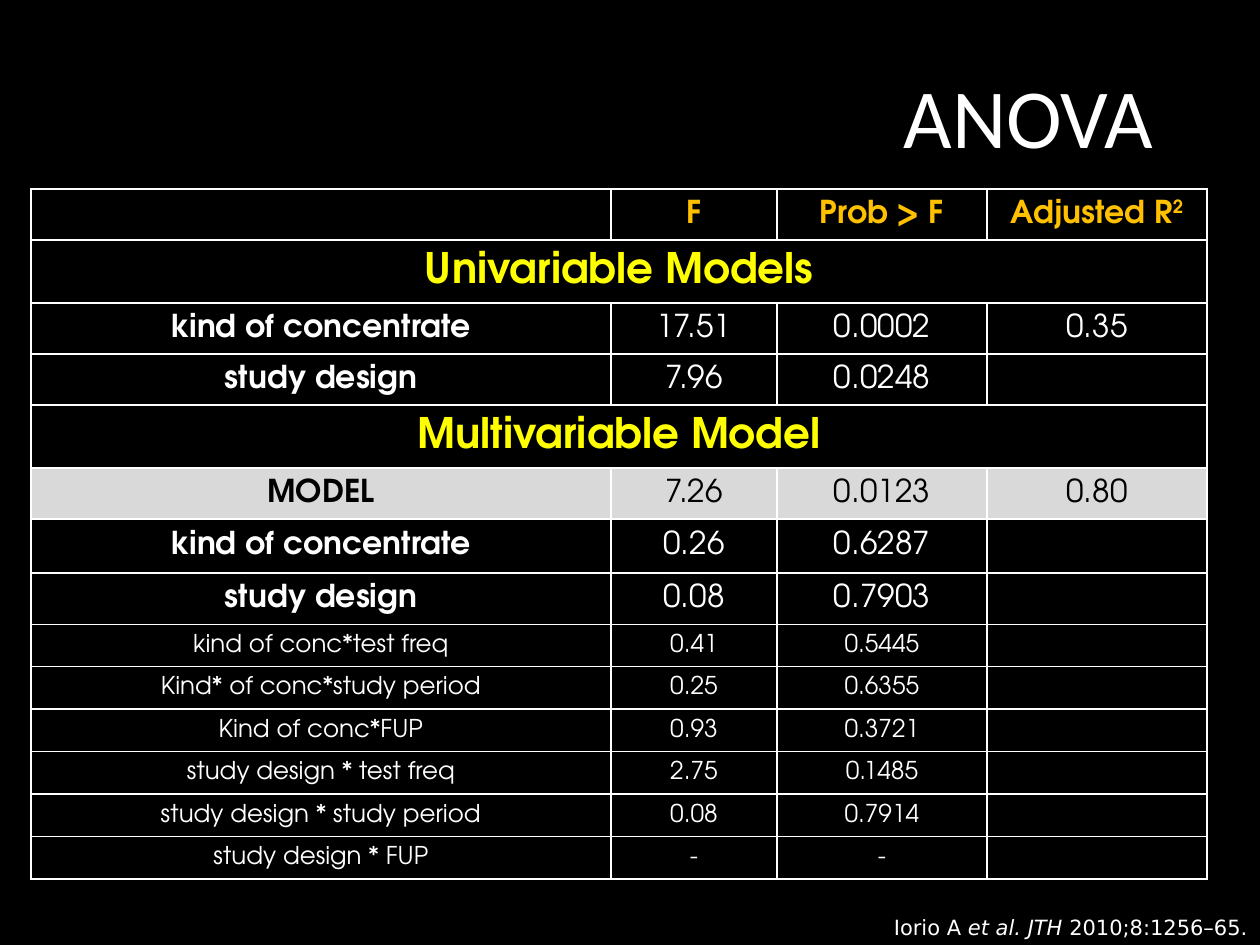
import pptx
import pptx.dml.color
import pptx.enum.text
import pptx.oxml
import pptx.oxml.ns
import pptx.util

RGBColor = pptx.dml.color.RGBColor
BLACK = RGBColor(0x00, 0x00, 0x00)
WHITE = RGBColor(0xFF, 0xFF, 0xFF)
AMBER = RGBColor(0xFF, 0xC0, 0x00)
YELLOW = RGBColor(0xFF, 0xFF, 0x00)
LIGHT_GREY = RGBColor(0xD9, 0xD9, 0xD9)

EMU_PER_PX = 914400 / 126
TABLE_FONT = "TeX Gyre Adventor"
COLUMN_WIDTHS = (580, 166, 210, 220)

# Style: row height, size, colour, label bold, values bold, fill
STYLES = {
    "header": (51, 18, AMBER, True, True, None),
    "section": (63, 24, YELLOW, True, True, None),
    "factor": (51, 18, WHITE, True, False, None),
    "tall factor": (54, 18, WHITE, True, False, None),
    "model": (51, 18, BLACK, True, False, LIGHT_GREY),
    "interaction": (42, 14, WHITE, False, False, None),
}
ANOVA_ROWS = (
    ("header", "", "F", "Prob > F", "Adjusted R"),
    ("section", "Univariable Models", "", "", ""),
    ("factor", "kind of concentrate", "17.51", "0.0002", "0.35"),
    ("factor", "study design", "7.96", "0.0248", ""),
    ("section", "Multivariable Model", "", "", ""),
    ("model", "MODEL", "7.26", "0.0123", "0.80"),
    ("tall factor", "kind of concentrate", "0.26", "0.6287", ""),
    ("factor", "study design", "0.08", "0.7903", ""),
    ("interaction", "kind of conc*test freq", "0.41", "0.5445", ""),
    ("interaction", "Kind* of conc*study period", "0.25", "0.6355", ""),
    ("interaction", "Kind of conc*FUP", "0.93", "0.3721", ""),
    ("interaction", "study design * test freq", "2.75", "0.1485", ""),
    ("interaction", "study design * study period", "0.08", "0.7914", ""),
    ("interaction", "study design * FUP", "-", "-", ""),
)


def px(length):
    """Turn a length in px into EMU."""
    return pptx.util.Emu(round(length * EMU_PER_PX))


def format_run(run, font, size, color, bold=False, italic=False):
    """Set the font of one run."""
    run.font.name = font
    run.font.size = pptx.util.Pt(size)
    run.font.color.rgb = color
    run.font.bold = bold
    run.font.italic = italic


def add_borders(cell):
    """Draw a white one-point line on each side of a cell."""
    properties = cell._tc.get_or_add_tcPr()
    for side in "LRTB":
        properties.append(pptx.oxml.parse_xml(
            f'<a:ln{side} {pptx.oxml.ns.nsdecls("a")} w="12700"><a:solidFill>'
            f'<a:srgbClr val="{WHITE}"/></a:solidFill></a:ln{side}>'))


def fill_cell(cell, wording, size, color, bold, fill):
    """Write and format one cell of the table."""
    add_borders(cell)
    if fill is None:
        cell.fill.background()
    else:
        cell.fill.solid()
        cell.fill.fore_color.rgb = fill
    cell.vertical_anchor = pptx.enum.text.MSO_ANCHOR.MIDDLE
    paragraph = cell.text_frame.paragraphs[0]
    paragraph.alignment = pptx.enum.text.PP_ALIGN.CENTER
    if wording:
        paragraph.text = wording
        format_run(paragraph.runs[0], TABLE_FONT, size, color, bold)
    else:
        paragraph._p.append(pptx.oxml.parse_xml(
            f'<a:endParaRPr {pptx.oxml.ns.nsdecls("a")} sz="{size * 100}"/>'))


def add_anova_table(slide, left, top):
    """Place the table of models with its corner at left, top."""
    heights = [STYLES[style][0] for style, *_ in ANOVA_ROWS]
    table = slide.shapes.add_table(
        len(ANOVA_ROWS), len(COLUMN_WIDTHS), px(left), px(top),
        px(sum(COLUMN_WIDTHS)), px(sum(heights))).table
    table.first_row = False
    table.horz_banding = False
    for column, width in zip(table.columns, COLUMN_WIDTHS):
        column.width = px(width)
    for index, (style, *wordings) in enumerate(ANOVA_ROWS):
        height, size, color, label_bold, value_bold, fill = STYLES[style]
        table.rows[index].height = px(height)
        for column, wording in enumerate(wordings):
            bold = value_bold if column else label_bold
            fill_cell(table.cell(index, column), wording, size, color, bold, fill)
        if style == "section":
            table.cell(index, 0).merge(table.cell(index, len(COLUMN_WIDTHS) - 1))
    square = table.cell(0, 3).text_frame.paragraphs[0].add_run()
    square.text = "2"
    format_run(square, TABLE_FONT, 18, AMBER, True)
    square._r.get_or_add_rPr().set("baseline", "30000")


def add_title(slide, left, top, width, height):
    """Move the title placeholder into its box and write it."""
    title = slide.shapes.title
    title.left, title.top = px(left), px(top)
    title.width, title.height = px(width), px(height)
    title.text_frame.text = "ANOVA"
    title.text_frame.vertical_anchor = pptx.enum.text.MSO_ANCHOR.MIDDLE
    paragraph = title.text_frame.paragraphs[0]
    paragraph.alignment = pptx.enum.text.PP_ALIGN.RIGHT
    format_run(paragraph.runs[0], "Calibri", 48, WHITE)


def add_citation(slide, left, top, width, height):
    """Write the literature reference in its box."""
    citation = slide.shapes.add_textbox(px(left), px(top), px(width), px(height))
    citation.text_frame.word_wrap = True
    citation.text_frame.auto_size = pptx.enum.text.MSO_AUTO_SIZE.SHAPE_TO_FIT_TEXT
    paragraph = citation.text_frame.paragraphs[0]
    paragraph.alignment = pptx.enum.text.PP_ALIGN.RIGHT
    for wording, italic in (("Iorio A ", False), ("et al. JTH ", True),
                            ("2010;8:1256–65.", False)):
        run = paragraph.add_run()
        run.text = wording
        format_run(run, "DejaVu Sans", 12, WHITE, italic=italic)


def main():
    """Build the slide and save it."""
    presentation = pptx.Presentation()
    presentation.slide_width = px(1260)
    presentation.slide_height = px(945)
    slide = presentation.slides.add_slide(presentation.slide_layouts[5])
    slide.background.fill.solid()
    slide.background.fill.fore_color.rgb = BLACK
    add_anova_table(slide, 31, 189)
    add_title(slide, 95, 16, 1071, 197)
    add_citation(slide, 630, 908, 630, 38)
    presentation.save("out.pptx")


if __name__ == "__main__":
    main()
